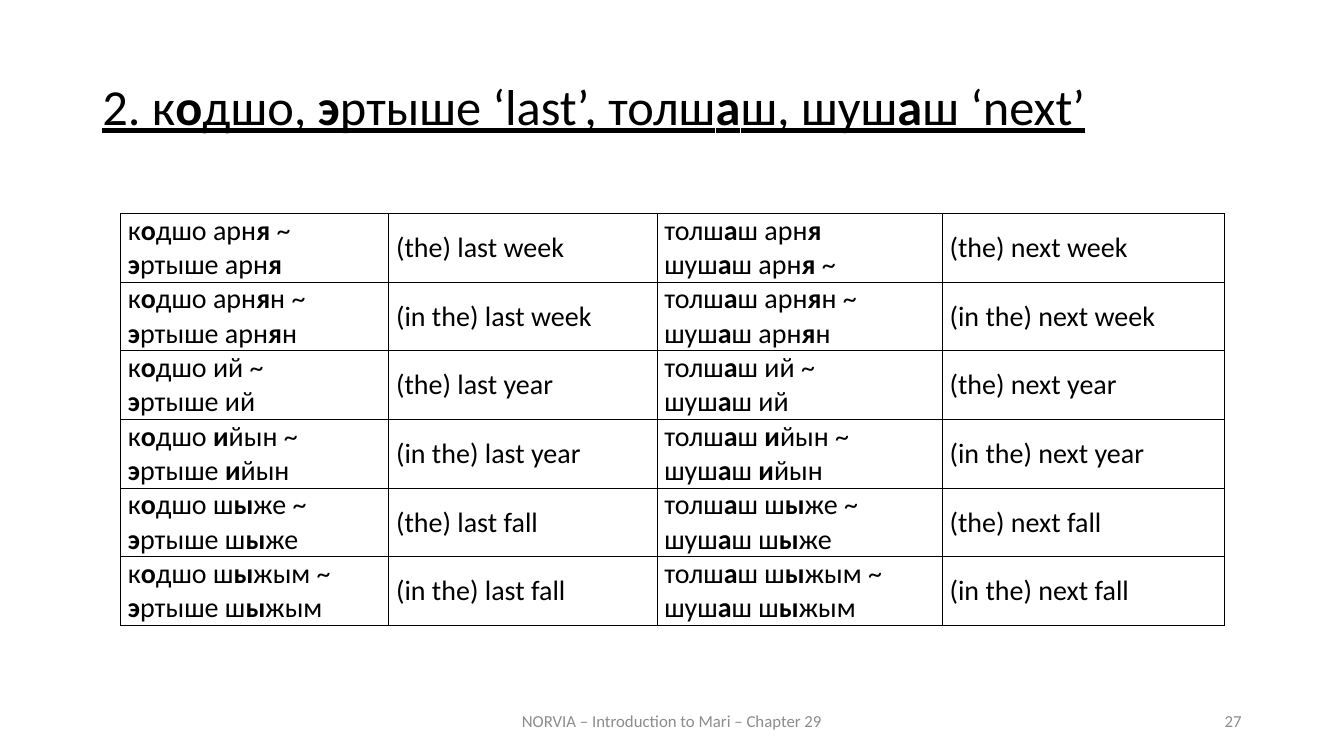
import pptx
import pptx.dml.color
import pptx.enum.text
import pptx.oxml
import pptx.oxml.ns
import pptx.util
from pptx.util import Cm, Pt

BLACK = pptx.dml.color.RGBColor(0x00, 0x00, 0x00)
GRAY = pptx.dml.color.RGBColor(0x8C, 0x8C, 0x8C)
ALIGN = pptx.enum.text.PP_ALIGN
MIDDLE = pptx.enum.text.MSO_ANCHOR.MIDDLE

# Content: asterisks enclose the bold stressed letters
TITLE = "2. к*о*дшо, *э*ртыше ‘last’, толш*а*ш, шуш*а*ш ‘next’"
FOOTER = "NORVIA – Introduction to Mari – Chapter 29"
PAGE_NUMBER = "27"
PHRASES = [
    ("к*о*дшо арн*я* ~\n*э*ртыше арн*я*", "(the) last week",
     "толш*а*ш арн*я*\nшуш*а*ш арн*я* ~", "(the) next week"),
    ("к*о*дшо арн*я*н ~\n*э*ртыше арн*я*н", "(in the) last week",
     "толш*а*ш арн*я*н ~\nшуш*а*ш арн*я*н", "(in the) next week"),
    ("к*о*дшо ий ~\n*э*ртыше ий", "(the) last year",
     "толш*а*ш ий ~\nшуш*а*ш ий", "(the) next year"),
    ("к*о*дшо *и*йын ~\n*э*ртыше *и*йын", "(in the) last year",
     "толш*а*ш *и*йын ~\nшуш*а*ш *и*йын", "(in the) next year"),
    ("к*о*дшо ш*ы*же ~\n*э*ртыше ш*ы*же", "(the) last fall",
     "толш*а*ш ш*ы*же ~\nшуш*а*ш ш*ы*же", "(the) next fall"),
    ("к*о*дшо ш*ы*жым ~\n*э*ртыше ш*ы*жым", "(in the) last fall",
     "толш*а*ш ш*ы*жым ~\nшуш*а*ш ш*ы*жым", "(in the) next fall"),
]
COLUMN_WIDTHS = [6.76, 6.76, 7.19, 7.11]
ROW_HEIGHT = 1.73


def write_text(frame, text, size=20, color=BLACK, align=ALIGN.LEFT,
               underline=False, line_spacing=None, space_before=None):
    frame.word_wrap = True
    for index, line in enumerate(text.split("\n")):
        para = frame.paragraphs[0] if index == 0 else frame.add_paragraph()
        para.alignment = align
        para.line_spacing = line_spacing
        para.space_before = space_before
        for position, piece in enumerate(line.split("*")):
            if piece:
                span = para.add_run()
                span.text = piece
                span.font.name = "Calibri"
                span.font.size = Pt(size)
                span.font.color.rgb = color
                span.font.bold = position % 2 == 1
                span.font.underline = underline


def add_borders(cell):
    properties = cell._tc.get_or_add_tcPr()
    for index, side in enumerate(("lnL", "lnR", "lnT", "lnB")):
        border = pptx.oxml.parse_xml(
            f'<a:{side} {pptx.oxml.ns.nsdecls("a")} w="{Pt(1)}">'
            f'<a:solidFill><a:srgbClr val="{BLACK}"/></a:solidFill></a:{side}>')
        properties.insert(index, border)


deck = pptx.Presentation()
deck.slide_width, deck.slide_height = Cm(33.87), Cm(19.05)
page = deck.slides.add_slide(deck.slide_layouts[6])

# Title
box = page.shapes.add_textbox(Cm(2.33), Cm(1.93), Cm(29.21), Cm(2.11))
write_text(box.text_frame, TITLE, size=36, align=ALIGN.JUSTIFY, underline=True,
           line_spacing=0.9, space_before=Pt(12))

# Footer and page number
for text, left, width, align in ((FOOTER, 11.22, 11.43, ALIGN.CENTER),
                                 (PAGE_NUMBER, 23.92, 7.62, ALIGN.RIGHT)):
    box = page.shapes.add_textbox(Cm(left), Cm(17.66), Cm(width), Cm(1.01))
    box.text_frame.vertical_anchor = MIDDLE
    write_text(box.text_frame, text, size=12, color=GRAY, align=align)

# Phrase table
table = page.shapes.add_table(
    len(PHRASES), len(COLUMN_WIDTHS), Cm(3.04), Cm(5.38),
    Cm(sum(COLUMN_WIDTHS)), Cm(ROW_HEIGHT * len(PHRASES))).table
table.first_row = table.horz_banding = False
for column, width in zip(table.columns, COLUMN_WIDTHS):
    column.width = Cm(width)
for row, phrases in zip(table.rows, PHRASES):
    row.height = Cm(ROW_HEIGHT)
    for cell, phrase in zip(row.cells, phrases):
        cell.fill.background()
        cell.vertical_anchor = MIDDLE
        cell.margin_left = cell.margin_right = Cm(0.18)
        cell.margin_top = cell.margin_bottom = 0
        write_text(cell.text_frame, phrase)
        add_borders(cell)

deck.save("out.pptx")
